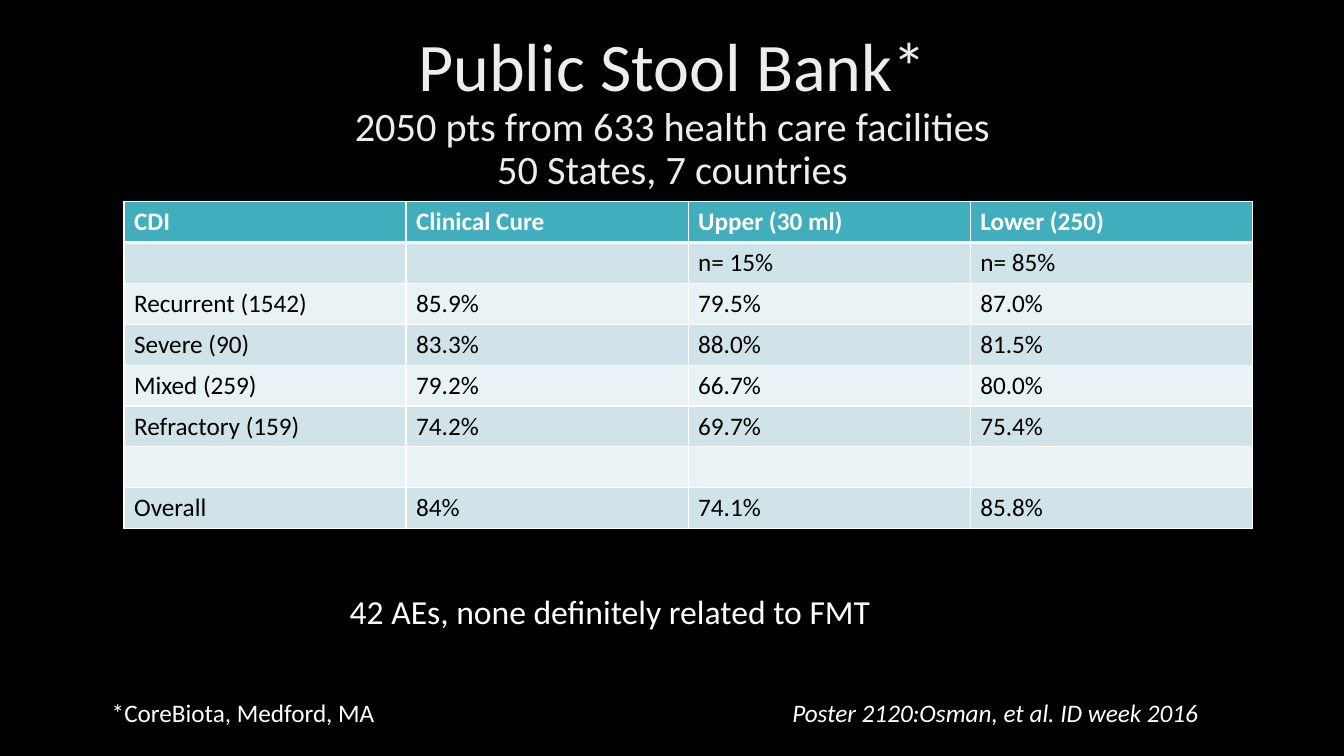
import lxml.etree
import pptx
import pptx.dml.color
import pptx.enum.text
import pptx.oxml.ns
import pptx.util

FONT = "Calibri"
WHITE, BLACK, TITLE_GREY = "FFFFFF", "000000", "EDEDED"
HEADER_TEAL, BAND_DARK, BAND_LIGHT = "41AEBD", "CFE3E8", "E9F2F4"
ROW_HEIGHT, COLUMN_WIDTH = 0.405, 2.798

TITLE_LINES = [
    ("Public Stool Bank*", 48.6),
    ("2050 pts from 633 health care facilities", 28.8),
    ("50 States, 7 countries", 28.8),
]
CURE_RATES = [
    ["CDI", "Clinical Cure", "Upper (30 ml)", "Lower (250)"],
    ["", "", "n= 15%", "n= 85%"],
    ["Recurrent (1542)", "85.9%", "79.5%", "87.0%"],
    ["Severe (90)", "83.3%", "88.0%", "81.5%"],
    ["Mixed (259)", "79.2%", "66.7%", "80.0%"],
    ["Refractory (159)", "74.2%", "69.7%", "75.4%"],
    ["", "", "", ""],
    ["Overall", "84%", "74.1%", "85.8%"],
]


def set_color(target, color):
    """Colour a fill, which is made solid, or a font."""
    if hasattr(target, "solid"):
        target.solid()
        target.fore_color.rgb = pptx.dml.color.RGBColor.from_string(color)
    else:
        target.color.rgb = pptx.dml.color.RGBColor.from_string(color)


def inches(*lengths):
    return [pptx.util.Inches(length) for length in lengths]


def add_run(paragraph, text, size, color, bold=False, italic=False):
    run = paragraph.add_run()
    run.text = text
    run.font.name = FONT
    run.font.size = pptx.util.Pt(size)
    run.font.bold = bold
    run.font.italic = italic
    set_color(run.font, color)


def add_sub_element(parent, tag, **attributes):
    return lxml.etree.SubElement(parent, pptx.oxml.ns.qn(tag), **attributes)


def fill_title(title):
    title.left, title.top, title.width, title.height = inches(0.92, 0.4, 11.5, 1.45)
    frame = title.text_frame
    frame.word_wrap = True
    frame.auto_size = pptx.enum.text.MSO_AUTO_SIZE.NONE
    frame.vertical_anchor = pptx.enum.text.MSO_ANCHOR.MIDDLE
    paragraph = frame.paragraphs[0]
    paragraph.alignment = pptx.enum.text.PP_ALIGN.CENTER
    paragraph.line_spacing = 0.9
    for index, (text, size) in enumerate(TITLE_LINES):
        add_run(paragraph, text, size, TITLE_GREY)
        if index < len(TITLE_LINES) - 1:
            # The break takes the size of its line
            paragraph.add_line_break()
            add_sub_element(paragraph._p[-1], "a:rPr", sz=str(round(size * 100)))


def set_borders(cell, widths):
    properties = cell._tc.get_or_add_tcPr()
    for position, (side, width) in enumerate(widths.items()):
        line = add_sub_element(properties, f"a:{side}", w=str(pptx.util.Pt(width)))
        fill = add_sub_element(line, "a:solidFill")
        add_sub_element(fill, "a:srgbClr", val=WHITE)
        properties.insert(position, line)


def add_cure_table(slide):
    row_count, column_count = len(CURE_RATES), len(CURE_RATES[0])
    table = slide.shapes.add_table(
        row_count, column_count,
        *inches(1.23, 2, column_count * COLUMN_WIDTH, row_count * ROW_HEIGHT)).table
    for row, texts in enumerate(CURE_RATES):
        header = row == 0
        band = HEADER_TEAL if header else (BAND_DARK if row % 2 else BAND_LIGHT)
        for column, text in enumerate(texts):
            cell = table.cell(row, column)
            set_color(cell.fill, band)
            set_borders(cell, {"lnL": 1, "lnR": 1, "lnT": 3 if row == 1 else 1,
                               "lnB": 3 if header else 1})
            if text:
                add_run(cell.text_frame.paragraphs[0], text, 18,
                        WHITE if header else BLACK, bold=header)


def add_note(slide, text, place, size, italic=False):
    frame = slide.shapes.add_textbox(*inches(*place)).text_frame
    frame.word_wrap = True
    frame.auto_size = pptx.enum.text.MSO_AUTO_SIZE.SHAPE_TO_FIT_TEXT
    add_run(frame.paragraphs[0], text, size, WHITE, italic=italic)


def main():
    presentation = pptx.Presentation()
    presentation.slide_width, presentation.slide_height = inches(13.33, 7.5)
    slide = presentation.slides.add_slide(presentation.slide_layouts[5])
    set_color(slide.background.fill, BLACK)

    # Heading and results
    fill_title(slide.shapes.title)
    add_cure_table(slide)

    # Adverse events and footnotes
    add_note(slide, "42 AEs, none definitely related to FMT", (3.37, 5.81, 6.38, 0.5), 24)
    add_note(slide, "*CoreBiota, Medford, MA", (1.01, 6.87, 3.11, 0.4), 18)
    add_note(slide, "Poster 2120:Osman, et al. ID week 2016",
             (7.76, 6.87, 5.3, 0.4), 18, italic=True)

    presentation.save("out.pptx")


if __name__ == "__main__":
    main()
